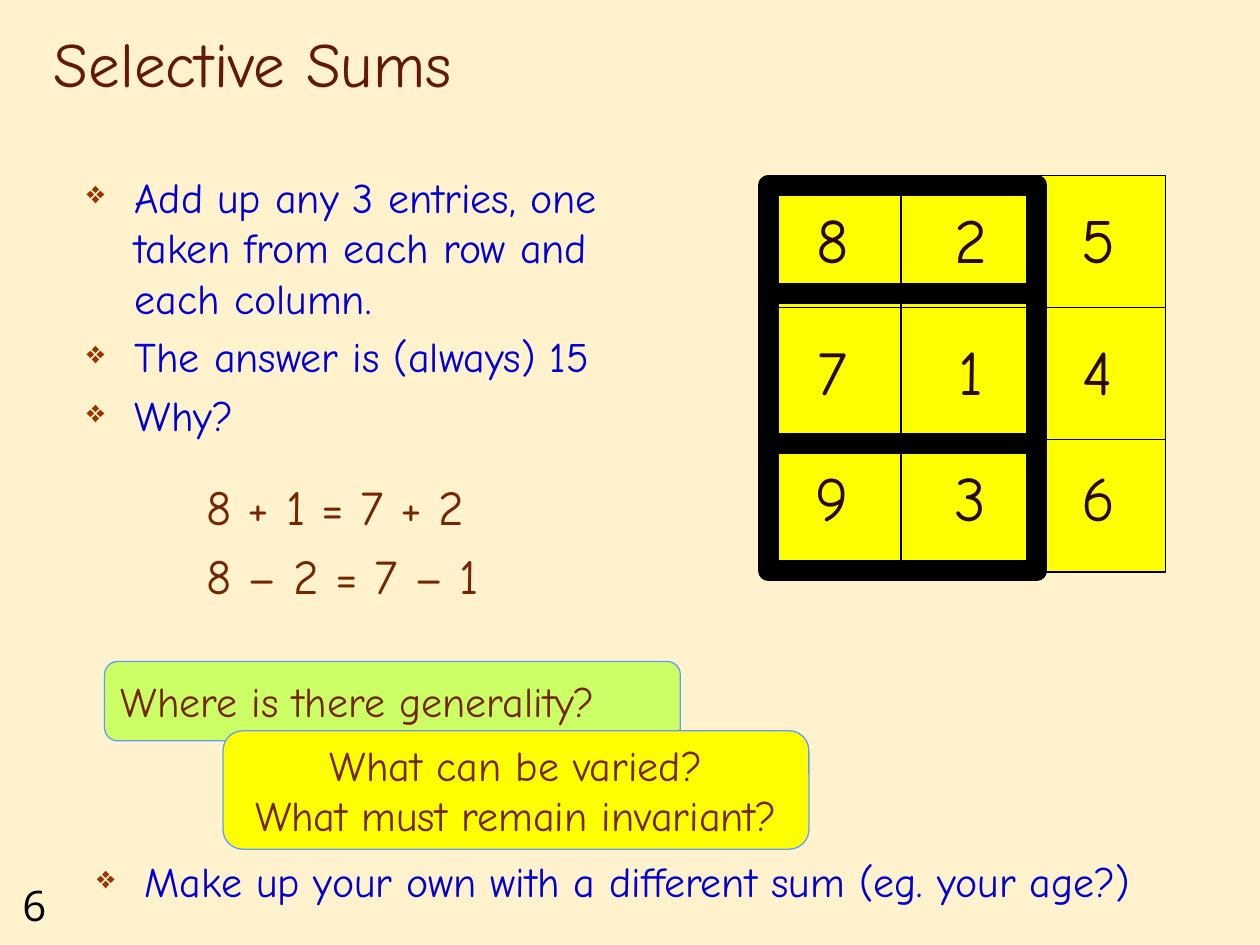
import pptx
import pptx.util
import pptx.dml.color
import pptx.enum.shapes
import pptx.enum.text
import pptx.oxml
import pptx.oxml.ns

Inches = pptx.util.Inches
Pt = pptx.util.Pt
RGBColor = pptx.dml.color.RGBColor
Shape = pptx.enum.shapes.MSO_SHAPE
Align = pptx.enum.text.PP_ALIGN
Anchor = pptx.enum.text.MSO_ANCHOR

CREAM = RGBColor(0xFF, 0xF2, 0xCC)
BLACK = RGBColor(0, 0, 0)
MAROON = RGBColor(0x63, 0x19, 0x08)
DARK = RGBColor(0x28, 0x0A, 0x03)
BROWN = RGBColor(0x73, 0x26, 0x00)
BLUE = RGBColor(0, 0, 0xD4)
SKY = RGBColor(0x66, 0x99, 0xFF)
YELLOW = RGBColor(0xFF, 0xFF, 0)
LIME = RGBColor(0xCC, 0xFF, 0x66)
FONT = "Comic Neue"

# Content
TITLE = "Selective Sums"
PAGE = "6"
GRID = [[8, 2, 5], [7, 1, 4], [9, 3, 6]]
POINTS = [
    "Add up any 3 entries, one taken from each row and each column.",
    "The answer is (always) 15",
    "Why?",
]
TASK = ["Make up your own with a different sum (eg. your age?)"]
SUMS = ["8 + 1 = 7 + 2", "8 – 2 = 7 – 1"]
ASKS = [  # box, fill, alignment, lines
    ((0.83, 5.25, 4.57, 0.63), LIME, Align.LEFT, ["Where is there generality?"]),
    ((1.77, 5.8, 4.65, 0.94), YELLOW, Align.CENTER,
     ["What can be varied?", "What must remain invariant?"]),
]
FRAMES = [(6.1, 1.47, 2.13, 2.05), (6.1, 2.33, 2.13, 2.2)]

# Grid measures
LEFT, TOP, CELL, STEP = 6.1, 1.39, 1.05, 1.05
DIGIT_X = [6.36, 7.46, 8.47]
DIGIT_Y = [1.54, 2.59, 3.59]


def add_run(para, text, size, color, font=FONT):
    run = para.add_run()
    run.text = text
    run.font.name, run.font.size = font, Pt(size)
    run.font.color.rgb = color


def add_text(home, box, text, size, color, font=FONT, align=Align.LEFT, wrap=True):
    shape = home.add_textbox(*map(Inches, box))
    frame = shape.text_frame
    frame.word_wrap = wrap
    para = frame.paragraphs[0]
    para.alignment = align
    add_run(para, text, size, color, font)
    return frame


def add_box(home, kind, box, fill, line, width):
    shape = home.add_shape(kind, *map(Inches, box))
    shape.shadow.inherit = False
    if fill is None:
        shape.fill.background()
    else:
        shape.fill.solid()
        shape.fill.fore_color.rgb = fill
    shape.line.color.rgb = line
    shape.line.width = Pt(width)
    return shape


def add_list(home, box, items):
    frame = home.add_textbox(*map(Inches, box)).text_frame
    frame.word_wrap = True
    for i, item in enumerate(items):
        para = frame.add_paragraph() if i else frame.paragraphs[0]
        para.space_before = Pt(4.8)
        props = para._p.get_or_add_pPr()
        props.set("marL", str(Inches(0.38)))
        props.set("indent", str(-Inches(0.38)))
        space = pptx.oxml.ns.nsdecls("a")
        for mark in (
            f'<a:buClr {space}><a:srgbClr val="993300"/></a:buClr>',
            f'<a:buSzPct {space} val="75000"/>',
            f'<a:buChar {space} char="❖"/>',
        ):
            props.append(pptx.oxml.parse_xml(mark))
        add_run(para, item, 24, BLUE)


deck = pptx.Presentation()
deck.slide_width, deck.slide_height = Inches(10), Inches(7.5)
slide = deck.slides.add_slide(deck.slide_layouts[6])
slide.background.fill.solid()
slide.background.fill.fore_color.rgb = CREAM
shapes = slide.shapes

# Page number and title
add_text(shapes, (0.08, 6.93, 0.75, 0.5), PAGE, 24, BLACK, "Open Sans")
head = add_text(shapes, (0.33, 0.17, 8.5, 0.67), TITLE, 36, MAROON)
head.vertical_anchor = Anchor.BOTTOM

# Number grid: squares first, then digits
grid = shapes.add_group_shape().shapes
for r, row in enumerate(GRID):
    for c, num in enumerate(row):
        spot = (LEFT + c * STEP, TOP + r * STEP, CELL, CELL)
        add_box(grid, Shape.RECTANGLE, spot, YELLOW, BLACK, 0.75)
for y, row in zip(DIGIT_Y, GRID):
    for x, num in zip(DIGIT_X, row):
        add_text(grid, (x, y, 0.49, 0.71), str(num), 36, DARK,
                 align=Align.CENTER, wrap=False)

# Bullets and heavy frames round two-by-two blocks
add_list(shapes, (0.59, 1.31, 4.73, 2.37), POINTS)
for box in FRAMES:
    add_box(shapes, Shape.RECTANGLE, box, None, BLACK, 12)
add_list(shapes, (0.67, 6.74, 9.21, 0.71), TASK)

# Question boxes
for box, fill, align, lines in ASKS:
    frame = add_box(shapes, Shape.ROUNDED_RECTANGLE, box, fill, SKY, 0.75).text_frame
    frame.word_wrap = True
    frame.vertical_anchor = Anchor.MIDDLE
    para = frame.paragraphs[0]
    para.alignment = align
    for i, line in enumerate(lines):
        if i:
            para.add_line_break()
        add_run(para, line, 24, BROWN)

# Sums
for i, text in enumerate(SUMS):
    add_text(shapes, (1.54, 3.73 + i * 0.55, 2.68, 0.57), text, 28, BROWN)

deck.save("out.pptx")
